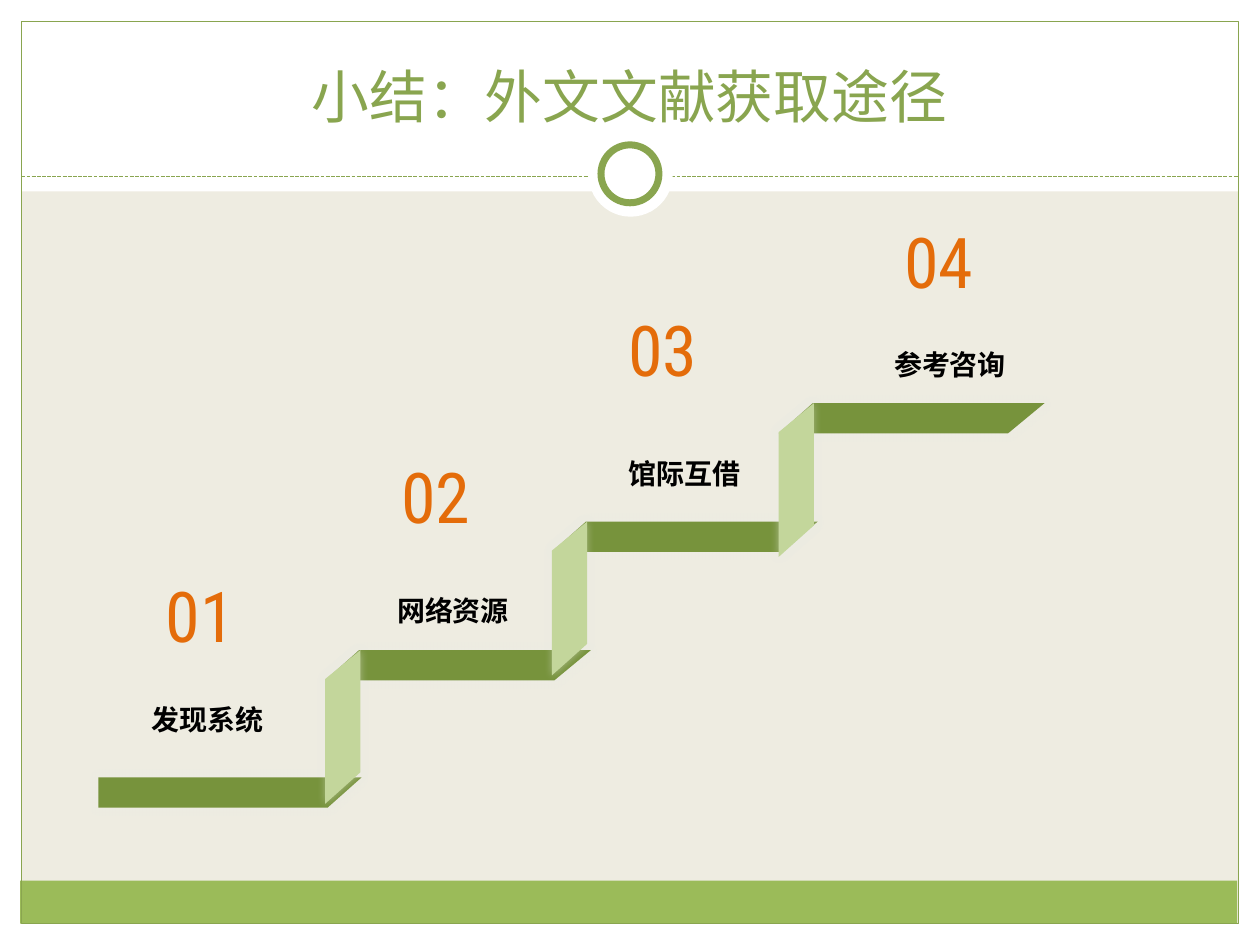
from lxml.etree import SubElement
from pptx import Presentation
from pptx.dml.color import RGBColor
from pptx.enum.dml import MSO_LINE
from pptx.enum.shapes import MSO_CONNECTOR, MSO_SHAPE
from pptx.enum.text import MSO_ANCHOR, MSO_AUTO_SIZE, PP_ALIGN
from pptx.oxml.ns import qn
from pptx.util import Inches, Pt

WHITE, OLIVE, LEAF, SAND = "FFFFFF", "89A54F", "9BBB59", "EEECE1"
TREAD_GREEN, RISER_GREEN, ORANGE, BLACK = "77933C", "C3D69B", "E46C0A", "000000"
CJK_FONT = "Noto Sans CJK SC"

FIRST_TREAD = [(0, 0), (2.09, 0), (1.82, 0.24), (0, 0.24)]
TREAD = [(0, 0.24), (0.27, 0), (2.11, 0), (1.82, 0.24)]
RISER = [(0, 1.22), (0.28, 0.97), (0.28, 0), (0, 0.23)]
STEP_LEFT, STEP_RUN = 2.58, 1.8
STEP_TOPS = [5.16, 4.14, 3.2]

NUMBER_FRAME = {"vertical_anchor": MSO_ANCHOR.MIDDLE, "word_wrap": True,
                "margin_left": 0, "margin_top": Inches(0.05),
                "margin_right": 0, "margin_bottom": 0}
LABEL_FRAME = {"word_wrap": True, "auto_size": MSO_AUTO_SIZE.SHAPE_TO_FIT_TEXT}
TITLE_FRAME = {"vertical_anchor": MSO_ANCHOR.BOTTOM, "word_wrap": True,
               "auto_size": MSO_AUTO_SIZE.NONE}
NUMBER_FONT = {"name": "Roboto Condensed", "size": Pt(40), "bold": False}
LABEL_FONT = {"name": CJK_FONT, "size": Pt(16), "bold": True}
TITLE_FONT = {"name": "Arial", "size": Pt(33), "bold": False}

STAGES = [
    ("01", (0.94, 4.61), "发现系统", (0.94, 5.47, 1.41, 0.4)),
    ("02", (2.81, 3.67), "网络资源", (2.97, 4.61, 1.25, 0.4)),
    ("03", (4.61, 2.5), "馆际互借", (4.77, 3.52, 1.33, 0.4)),
    ("04", (6.8, 1.8), "参考咨询", (6.8, 2.66, 1.48, 0.4)),
]


def color(hex_value):
    return RGBColor.from_string(hex_value)


def set_all(target, values):
    for attribute, value in values.items():
        setattr(target, attribute, value)


def paint(shape, fill=None, line=None, width=0.75):
    shape.shadow.inherit = False
    if fill:
        shape.fill.solid()
        shape.fill.fore_color.rgb = color(fill)
    else:
        shape.fill.background()
    if line:
        shape.line.color.rgb = color(line)
        shape.line.width = Pt(width)
    else:
        shape.line.fill.background()


def add_panel(slide, box, kind=MSO_SHAPE.RECTANGLE, **style):
    panel = slide.shapes.add_shape(kind, *map(Inches, box))
    paint(panel, **style)


def add_divider(slide):
    divider = slide.shapes.add_connector(
        MSO_CONNECTOR.STRAIGHT, *map(Inches, (0.17, 1.4, 9.83, 1.4)))
    divider.line.color.rgb = color(OLIVE)
    divider.line.width = Pt(0.75)
    divider.line.dash_style = MSO_LINE.SQUARE_DOT
    divider_properties = divider.element.find(qn("p:spPr"))
    divider_properties.find(qn("a:ln")).find(qn("a:prstDash")).set("val", "sysDash")
    SubElement(divider_properties, qn("a:effectLst"))


def add_ribbon(slide, left, top, outline, fill):
    corners = [(Inches(left + x), Inches(top + y)) for x, y in outline]
    builder = slide.shapes.build_freeform(*corners[0])
    builder.add_line_segments(corners[1:], close=True)
    ribbon = builder.convert_to_shape()
    paint(ribbon, fill)
    effects = ribbon.element.find(qn("p:spPr")).find(qn("a:effectLst"))
    glow = SubElement(effects, qn("a:outerShdw"), blurRad=str(Pt(5)),
                      dist="0", dir="0", algn="ctr", rotWithShape="0")
    tint = SubElement(glow, qn("a:srgbClr"), val="ECECEC")
    SubElement(tint, qn("a:alpha"), val="40000")


def write(holder, text, frame_values, font_values, ink, spacing=None):
    set_all(holder.text_frame, frame_values)
    paragraph = holder.text_frame.paragraphs[0]
    set_all(paragraph, {"alignment": PP_ALIGN.CENTER, "line_spacing": spacing})
    run = paragraph.add_run()
    run.text = text
    set_all(run.font, font_values)
    run.font.color.rgb = color(ink)
    SubElement(run.font._element, qn("a:ea"), typeface=CJK_FONT)


def add_text(slide, box, *content):
    write(slide.shapes.add_textbox(*map(Inches, box)), *content)


def add_frame(slide):
    for box in [(0, 7.33, 10, 0.17), (0, 0, 10, 1.52),
                (0, 0, 0.17, 7.5), (9.83, 0, 0.17, 7.5)]:
        add_panel(slide, box, fill=WHITE)
    add_panel(slide, (0.16, 6.99, 9.66, 0.34), fill=LEAF)
    add_panel(slide, (0.17, 0.17, 9.66, 7.16), line=OLIVE)
    add_divider(slide)
    add_panel(slide, (4.67, 1.05, 0.67, 0.67), MSO_SHAPE.OVAL, fill=WHITE)
    add_panel(slide, (4.77, 1.15, 0.46, 0.46), MSO_SHAPE.OVAL,
              fill=WHITE, line=OLIVE, width=4)


def add_title(slide, text):
    title = slide.shapes.title
    set_all(title, {"left": Inches(0.33), "top": Inches(0.25),
                    "width": Inches(9.33), "height": Inches(0.83)})
    write(title, text, TITLE_FRAME, TITLE_FONT, OLIVE)
    title.element.getparent().append(title.element)


def add_staircase(slide):
    corners = [(STEP_LEFT + index * STEP_RUN, top)
               for index, top in enumerate(STEP_TOPS)]
    for left, top in corners:
        add_ribbon(slide, left, top, TREAD, TREAD_GREEN)
    add_ribbon(slide, 0.78, 6.17, FIRST_TREAD, TREAD_GREEN)
    for left, top in corners:
        add_ribbon(slide, left, top, RISER, RISER_GREEN)


def main():
    deck = Presentation()
    set_all(deck, {"slide_width": Inches(10), "slide_height": Inches(7.5)})
    slide = deck.slides.add_slide(deck.slide_layouts[5])
    slide.background.fill.solid()
    slide.background.fill.fore_color.rgb = color(SAND)
    add_frame(slide)
    add_title(slide, "小结：外文文献获取途径")
    add_staircase(slide)
    for number, corner, label, label_box in STAGES:
        add_text(slide, (*corner, 1.3, 0.48), number, NUMBER_FRAME, NUMBER_FONT, ORANGE)
        add_text(slide, label_box, label, LABEL_FRAME, LABEL_FONT, BLACK, 1.2)
    deck.save("out.pptx")


if __name__ == "__main__":
    main()
